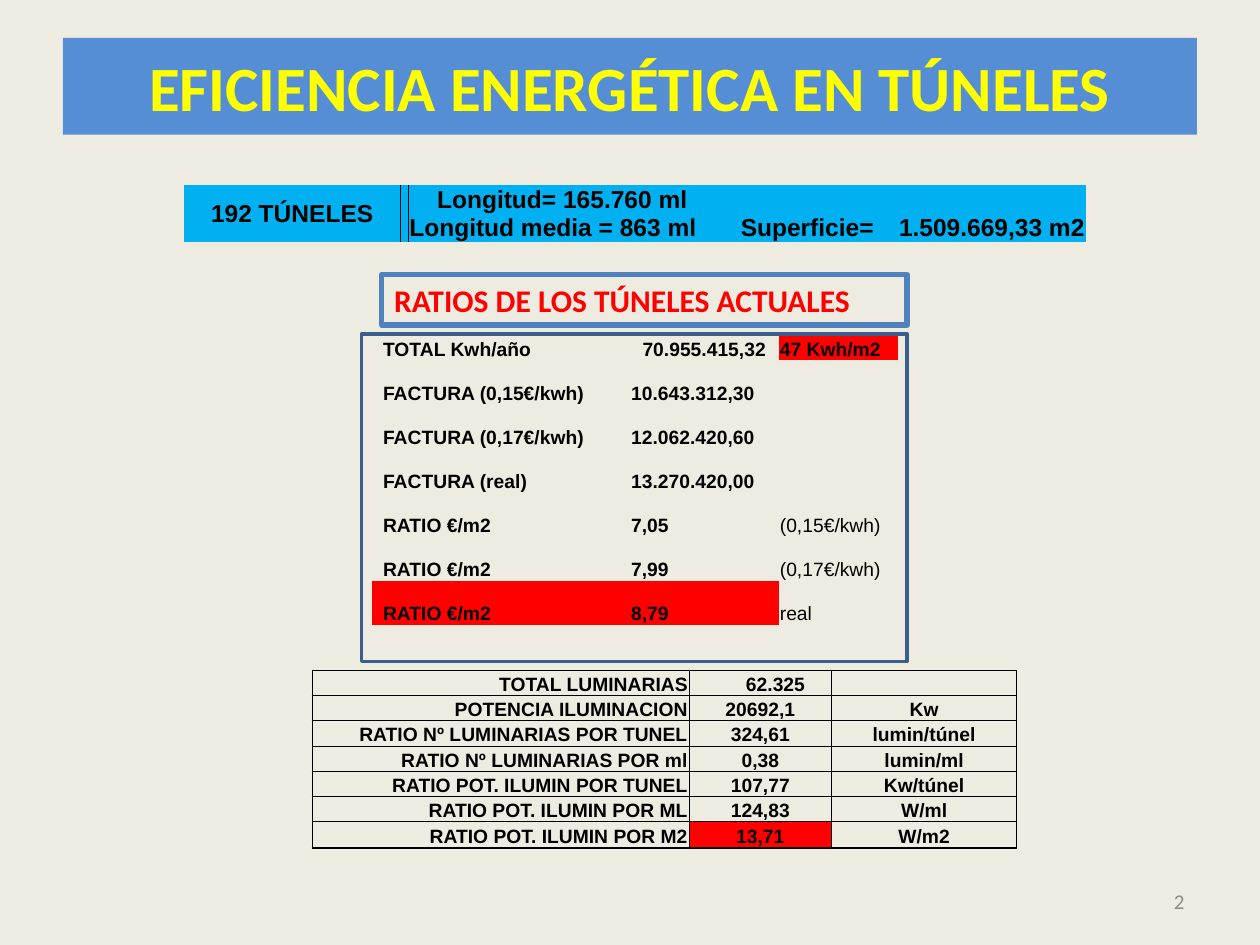
from lxml import etree
from pptx import Presentation
from pptx.dml.color import RGBColor
from pptx.enum.shapes import MSO_SHAPE
from pptx.enum.text import MSO_ANCHOR as ANCHOR, PP_ALIGN as ALIGN
from pptx.oxml.ns import qn
from pptx.util import Inches, Pt

BEIGE = RGBColor(0xEE, 0xEC, 0xE1)
TITLE_BLUE = RGBColor(0x55, 0x8E, 0xD5)
SKY = RGBColor(0x00, 0xB0, 0xF0)
FRAME_BLUE = RGBColor(0x3A, 0x5F, 0x8C)
HEADING_BLUE = RGBColor(0x4F, 0x81, 0xBD)
YELLOW = RGBColor(0xFF, 0xFF, 0x00)
RED = RGBColor(0xFF, 0x00, 0x00)
BLACK = RGBColor(0x00, 0x00, 0x00)
GRAY = RGBColor(0x8C, 0x8C, 0x8C)
PLAIN_STYLE = "{2D5ABB26-0587-4C30-8999-92F81FD0307C}"


def add_plain_table(left, top, widths, heights):
    """Add a table without style, sized by its columns and rows in inches."""
    frame = slide.shapes.add_table(
        len(heights), len(widths), Inches(left), Inches(top),
        Inches(sum(widths)), Inches(sum(heights)))
    table = frame.table
    table.first_row = table.horz_banding = False
    frame._element.find(".//" + qn("a:tableStyleId")).text = PLAIN_STYLE
    for column, width in zip(table.columns, widths):
        column.width = Inches(width)
    for row, height in zip(table.rows, heights):
        row.height = Inches(height)
    return table


def fill_cell(cell, text, size, align=ALIGN.LEFT, fill=None, bold=True,
              borders=None, anchor=ANCHOR.BOTTOM):
    """Write one cell; borders maps a side (L, R, T, B) to a width in points."""
    cell.margin_left = cell.margin_right = cell.margin_top = Inches(0.01)
    cell.margin_bottom = 0
    cell.vertical_anchor = anchor
    for side, width in (borders or {}).items():
        line = etree.SubElement(cell._tc.tcPr, qn("a:ln" + side), w=str(Pt(width)))
        solid = etree.SubElement(line, qn("a:solidFill"))
        etree.SubElement(solid, qn("a:srgbClr"), val=str(BLACK))
    if fill is None:
        cell.fill.background()
    else:
        cell.fill.solid()
        cell.fill.fore_color.rgb = fill
    para = cell.text_frame.paragraphs[0]
    para.alignment = align
    if text:
        span = para.add_run()
        span.text = text
        span.font.name, span.font.size = "Arial", Pt(size)
        span.font.bold, span.font.color.rgb = bold, BLACK
    else:
        etree.SubElement(para._p, qn("a:endParaRPr"), sz=str(size * 100))


deck = Presentation()
deck.slide_width, deck.slide_height = Inches(10), Inches(7.5)
slide = deck.slides.add_slide(deck.slide_layouts[6])
slide.background.fill.solid()
slide.background.fill.fore_color.rgb = BEIGE

# Ratios of the current tunnels
ratios = [
    ("TOTAL Kwh/año", "70.955.415,32", "47 Kwh/m2"),
    ("FACTURA (0,15€/kwh)", "10.643.312,30", ""),
    ("FACTURA (0,17€/kwh)", "12.062.420,60", ""),
    ("FACTURA (real)", "13.270.420,00", ""),
    ("RATIO €/m2", "7,05", "(0,15€/kwh)"),
    ("RATIO €/m2", "7,99", "(0,17€/kwh)"),
    ("RATIO €/m2", "8,79", "real"),
]
last = len(ratios) - 1
ratio_table = add_plain_table(2.87, 2.65, [0.08, 0.08, 1.97, 1.18, 0.95],
                              [0.21] + [0.35] * last)
for r, texts in enumerate(ratios):
    for c, text in enumerate(("", "") + texts):
        marked = (r == 0 and c == 4) or (r == last and 1 <= c <= 3)
        fill_cell(ratio_table.cell(r, c), text, 11,
                  align=ALIGN.CENTER if (r, c) == (0, 3) else ALIGN.LEFT,
                  fill=RED if marked else None, bold=c < 4 or r == 0)

# Tunnel totals
totals = [
    ("192 TÚNELES", ALIGN.CENTER, ANCHOR.MIDDLE, {"R": 0.5}),
    ("", ALIGN.LEFT, ANCHOR.BOTTOM, {"L": 0.5}),
    ("Longitud= 165.760 ml Longitud media = 863 ml", ALIGN.LEFT, ANCHOR.BOTTOM, {}),
    ("Superficie=", ALIGN.LEFT, ANCHOR.BOTTOM, {}),
    ("1.509.669,33 m2", ALIGN.RIGHT, ANCHOR.BOTTOM, {}),
]
total_table = add_plain_table(1.46, 1.47, [1.72, 0.06, 2.63, 1.23, 1.52], [0.44])
for c, (text, align, anchor, borders) in enumerate(totals):
    fill_cell(total_table.cell(0, c), text, 14, align, SKY,
              borders=borders, anchor=anchor)
length_para = total_table.cell(0, 2).text_frame.paragraphs[0]
length_para._p.get_or_add_pPr().set("indent", str(Inches(0.22)))

# Lighting
lighting = [
    ("TOTAL LUMINARIAS", "62.325", ""),
    ("POTENCIA ILUMINACION", "20692,1", "Kw"),
    ("RATIO Nº LUMINARIAS POR TUNEL", "324,61", "lumin/túnel"),
    ("RATIO Nº LUMINARIAS POR ml", "0,38", "lumin/ml"),
    ("RATIO POT. ILUMIN POR TUNEL", "107,77", "Kw/túnel"),
    ("RATIO POT. ILUMIN POR ML", "124,83", "W/ml"),
    ("RATIO POT. ILUMIN POR M2", "13,71", "W/m2"),
]
last = len(lighting) - 1
light_table = add_plain_table(2.48, 5.32, [2.99, 1.13, 1.47], [0.2] * last + [0.21])
for r, texts in enumerate(lighting):
    for c, text in enumerate(texts):
        outer = {"L": c == 0, "R": c == 2, "T": r == 0, "B": r == last}
        fill_cell(light_table.cell(r, c), text, 11,
                  align=ALIGN.RIGHT if c == 0 else ALIGN.CENTER,
                  fill=RED if (r, c) == (last, 1) else None,
                  borders={side: 1 if edge else 0.5 for side, edge in outer.items()})
light_table.cell(0, 1).margin_left = Inches(0.25)

# Title, frame, heading and page number:
# place, fill, line, line width, text, size, colour, bold, alignment
boxes = [
    ((0.5, 0.3, 9, 0.77), TITLE_BLUE, None, 0,
     "EFICIENCIA ENERGÉTICA EN TÚNELES", 36, YELLOW, True, ALIGN.CENTER),
    ((2.87, 2.65, 4.33, 2.6), None, FRAME_BLUE, 2, "", 0, None, False, None),
    ((3.03, 2.18, 4.17, 0.4), None, HEADING_BLUE, 3,
     "RATIOS DE LOS TÚNELES ACTUALES", 18, RED, True, ALIGN.LEFT),
    ((7.17, 6.95, 2.33, 0.4), None, None, 0, "2", 12, GRAY, False, ALIGN.RIGHT),
]
for place, fill, line, width, text, size, color, bold, align in boxes:
    box = slide.shapes.add_shape(MSO_SHAPE.RECTANGLE, *map(Inches, place))
    box.shadow.inherit = False
    if fill is None:
        box.fill.background()
    else:
        box.fill.solid()
        box.fill.fore_color.rgb = fill
    if line is None:
        box.line.fill.background()
    else:
        box.line.color.rgb = line
        box.line.width = Pt(width)
    if text:
        box.text_frame.word_wrap = True
        box.text_frame.vertical_anchor = ANCHOR.MIDDLE
        para = box.text_frame.paragraphs[0]
        para.alignment = align
        span = para.add_run()
        span.text = text
        span.font.name, span.font.size = "Calibri", Pt(size)
        span.font.bold, span.font.color.rgb = bold, color

deck.save("out.pptx")
